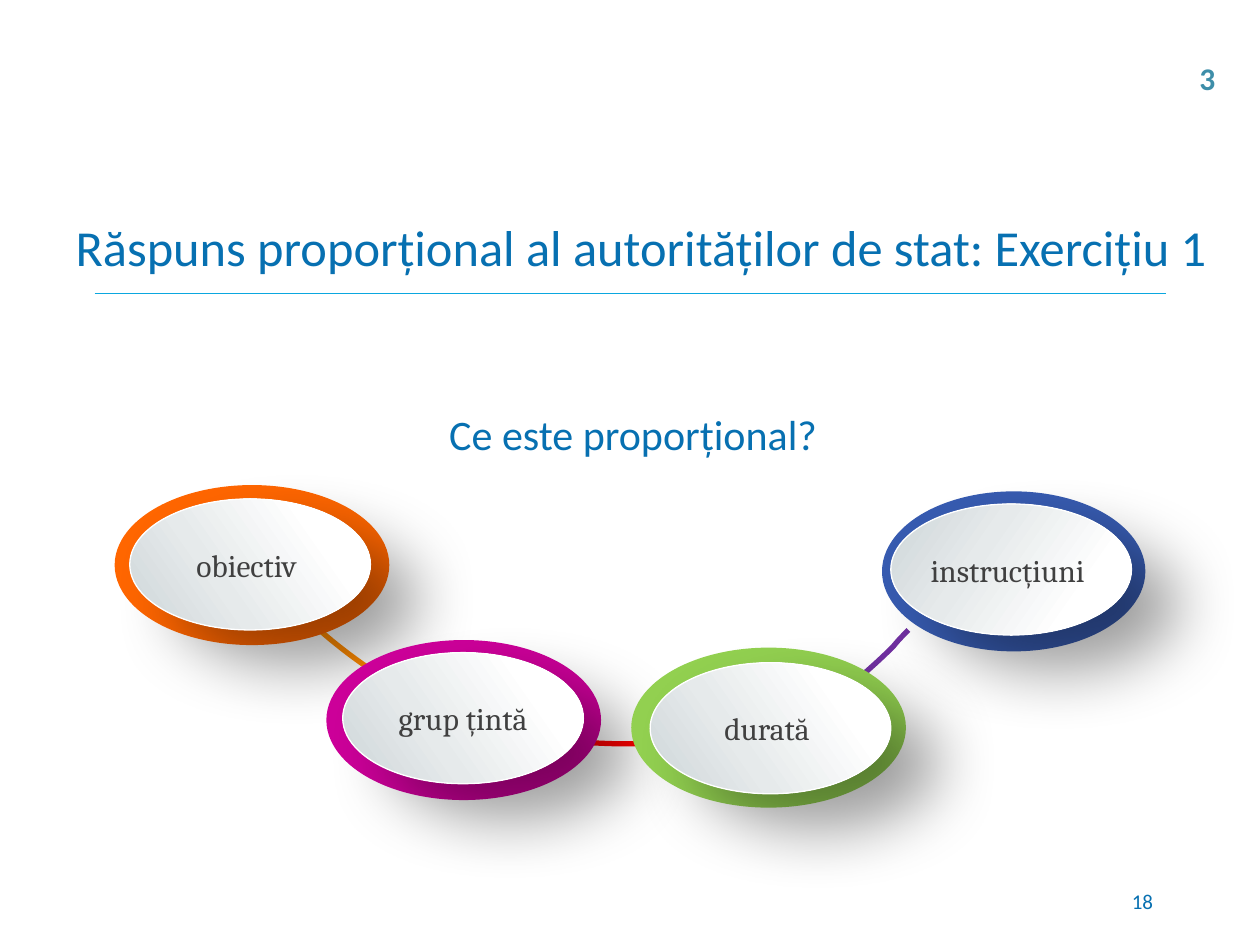
from lxml import etree
from pptx import Presentation, util as u
from pptx.dml.color import RGBColor
from pptx.enum import shapes as kinds, text as txt
from pptx.oxml import parse_xml
from pptx.oxml.ns import qn

# Grid: 10 columns by 7.5 rows, one inch each
COLS, ROWS = 10, 7.5
BLUE = "0770B1"
NS = 'xmlns:a="http://schemas.openxmlformats.org/drawingml/2006/main"'
GREY_TO_WHITE = [(0, "CDD5D8"), (37, "E6EAEB"), (77, "FFFFFF"), (100, "FFFFFF")]

# label, ring box, face box, ring colour, gradient angle
NODES = [
    ("instrucțiuni ", (7, 3.9, 2.09, 1.27), (7.07, 4), "375BB0", 35),
    ("obiectiv ", (0.91, 3.85, 2.18, 1.27), (1.03, 3.96), "FF6600", 325),
    ("grup țintă", (2.59, 5.08, 2.18, 1.27), (2.72, 5.18), "CC0099", 325),
    ("durată ", (5.01, 5.14, 2.18, 1.27), (5.16, 5.26), "92D050", 325),
]
FACE_SIZE = (1.91, 1.04)

# colour, Bézier segments of four points
LINKS = [
    ("7030A0", [[(7.21, 5), (7.17, 5.04), (7.13, 5.08), (7.09, 5.13)],
                [(7.09, 5.13), (6.96, 5.26), (6.82, 5.38), (6.68, 5.5)],
                [(6.68, 5.5), (6.5, 5.61), (6.31, 5.71), (6.1, 5.79)]]),
    ("FF0000", [[(4.49, 5.88), (4.71, 5.9), (4.93, 5.91), (5.15, 5.9)],
                [(5.15, 5.9), (5.26, 5.89), (5.37, 5.88), (5.48, 5.86)]]),
    ("FF8A00", [[(2.47, 4.94), (2.68, 5.14), (2.94, 5.32), (3.22, 5.5)]]),
]


def color(value):
    return RGBColor.from_string(value)


def grid(*cells):
    return [u.Inches(cell) for cell in cells]


def write(frame, words, size, font, ink, align=None, bold=False):
    paragraph = frame.paragraphs[0]
    paragraph.alignment = align
    run = paragraph.add_run()
    run.text = words
    run.font.size, run.font.name, run.font.bold = u.Pt(size), font, bold
    run.font.color.rgb = color(ink)
    return paragraph


def add_title(slide, box):
    title = slide.shapes.title
    title.left, title.top, title.width, title.height = grid(*box)
    title.text_frame.vertical_anchor = txt.MSO_ANCHOR.MIDDLE
    write(title.text_frame, "Răspuns proporțional al autorităților de stat: Exercițiu 1",
          28.8, "Calibri", BLUE, txt.PP_ALIGN.LEFT)


def add_rule(slide, left, right, row):
    rule = slide.shapes.add_connector(kinds.MSO_CONNECTOR.STRAIGHT,
                                      *grid(left, row, right, row))
    rule.line.color.rgb, rule.line.width = color("0BA7DF"), u.Pt(0.75)
    etree.SubElement(rule._element.spPr, qn("a:effectLst"))


def add_label(slide, box, words, size, ink=BLUE, align=None, bold=False, wrap=True):
    frame = slide.shapes.add_textbox(*grid(*box)).text_frame
    frame.word_wrap = wrap
    paragraph = write(frame, words, size, "Calibri", ink, align, bold)
    return frame, paragraph


def curve(points, steps=12):
    """Points along a cubic Bézier segment."""
    for step in range(steps + 1):
        t = step / steps
        weights = ((1 - t) ** 3, 3 * t * (1 - t) ** 2, 3 * t * t * (1 - t), t ** 3)
        yield tuple(u.Inches(sum(w * p[axis] for w, p in zip(weights, points)))
                    for axis in (0, 1))


def add_link(slide, ink, segments):
    trail = [point for segment in segments for point in curve(segment)]
    builder = slide.shapes.build_freeform(*trail[0])
    builder.add_line_segments(trail[1:], close=False)
    link = builder.convert_to_shape()
    link.shadow.inherit = False
    link.fill.background()
    link.line.color.rgb, link.line.width = color(ink), u.Pt(3)


def add_oval(slide, box, fill):
    oval = slide.shapes.add_shape(kinds.MSO_SHAPE.OVAL, *grid(*box))
    oval.shadow.inherit = False
    oval.fill.solid()
    oval.fill.fore_color.rgb = color(fill)
    oval.line.fill.background()
    return oval


def add_node(slide, words, ring_box, face_corner, ring_color, angle):
    add_oval(slide, ring_box, ring_color)
    face = add_oval(slide, face_corner + FACE_SIZE, "FFFFFF")
    face.line.color.rgb, face.line.width = color("FFFFFF"), u.Pt(0.75)

    # Gradient and soft shadow
    stops = "".join(f'<a:gs pos="{pos * 1000}"><a:srgbClr val="{ink}"/></a:gs>'
                    for pos, ink in GREY_TO_WHITE)
    props = face._element.spPr
    props.replace(props.find(qn("a:solidFill")), parse_xml(
        f'<a:gradFill {NS} rotWithShape="1"><a:gsLst>{stops}</a:gsLst>'
        f'<a:lin ang="{angle * 60000}" scaled="0"/></a:gradFill>'))
    props.find(qn("a:effectLst")).append(parse_xml(
        f'<a:outerShdw {NS} blurRad="{u.Pt(38)}" dist="{u.Pt(33)}" dir="2202000" '
        'algn="ctr" rotWithShape="0"><a:srgbClr val="000000">'
        '<a:alpha val="39000"/></a:srgbClr></a:outerShdw>'))

    frame = face.text_frame
    frame.margin_left = frame.margin_right = frame.margin_top = frame.margin_bottom = 0
    frame.vertical_anchor = txt.MSO_ANCHOR.MIDDLE
    write(frame, words, 18, "Cambria", "404040", txt.PP_ALIGN.CENTER)


def add_chain(slide):
    for link in LINKS:
        add_link(slide, *link)
    for node in NODES:
        add_node(slide, *node)


def main():
    deck = Presentation()
    deck.slide_width, deck.slide_height = grid(COLS, ROWS)
    slide = deck.slides.add_slide(deck.slide_layouts[5])

    # Heading and page number
    add_rule(slide, 0.75, 9.25, 2.33)
    add_title(slide, (0.5, 1.58, 9.25, 0.75))
    page, _ = add_label(slide, (7.17, 6.95, 2.08, 0.4), "18", 12,
                        align=txt.PP_ALIGN.RIGHT)
    page.vertical_anchor = txt.MSO_ANCHOR.MIDDLE

    # Chain of criteria
    add_chain(slide)

    # Question and section number
    _, question = add_label(slide, (2.59, 3.13, 4.87, 0.54), "Ce este proporțional?",
                            24, align=txt.PP_ALIGN.CENTER)
    question.line_spacing, question.space_after = 1.15, u.Pt(6)
    add_label(slide, (9.42, 0.42, 0.33, 0.4), "3", 18, "3E8EA9", bold=True, wrap=False)

    deck.save("out.pptx")


if __name__ == "__main__":
    main()
